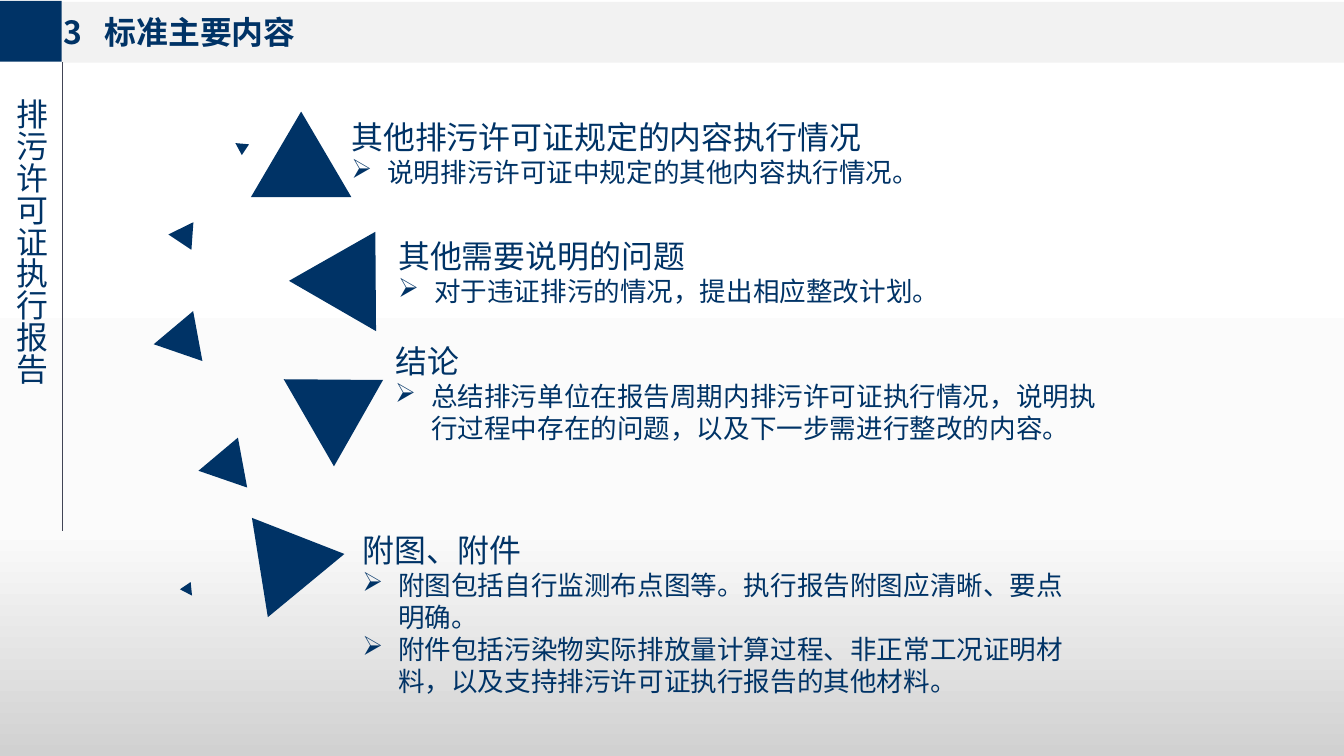
import copy

import lxml.etree
import pptx
import pptx.dml.color
import pptx.enum.shapes
import pptx.enum.text
import pptx.oxml.ns
import pptx.util

PX = 9525
COLORS = {"navy": "003366", "band": "F2F2F2", "rule": "414455"}
BACKDROP = [(0.14, "FFFFFF"), (0.70, "FBFBFB"), (1.0, "D1D1D1")]
BODY_FONT = "Noto Sans CJK SC"
HEADING_FONT = "Roboto Condensed"
INDENT = 36
INSETS = (10, 5, 10, 5)

SECTIONS = [
    ((343, 113, 724, 81), "其他排污许可证规定的内容执行情况",
     ["说明排污许可证中规定的其他内容执行情况。"]),
    ((390, 233, 675, 81), "其他需要说明的问题",
     ["对于违证排污的情况，提出相应整改计划。"]),
    ((387, 338, 749, 113), "结论",
     ["总结排污单位在报告周期内排污许可证执行情况，说明执行过程中存在的问题，"
      "以及下一步需进行整改的内容。"]),
    ((354, 528, 736, 178), "附图、附件",
     ["附图包括自行监测布点图等。执行报告附图应清晰、要点明确。",
      "附件包括污染物实际排放量计算过程、非正常工况证明材料，"
      "以及支持排污许可证执行报告的其他材料。"]),
]

TRIANGLE_SIZES = {"large": (101, 86), "medium": (51, 45), "small": (28, 24), "tiny": (13, 12)}
TRIANGLES = [
    ("large", 252, 112, 0), ("large", 305, 227, 30), ("large", 297, 360, 60),
    ("small", 173, 228, 153.9), ("tiny", 235, 141, 303.5), ("tiny", 183, 587, 145.8),
    ("medium", 151, 319, 259.5), ("medium", 196, 446, 259.5), ("large", 253, 520, 80.9),
]


def scaled(lengths):
    """Turn px lengths into EMU."""
    return [pptx.util.Emu(length * PX) for length in lengths]


def rgb(value):
    """Return a colour object for a hex string."""
    return pptx.dml.color.RGBColor.from_string(value)


def add_xml(parent, tag, **attributes):
    """Append a drawing element to a parent."""
    return lxml.etree.SubElement(parent, pptx.oxml.ns.qn(tag), attributes)


def paint_background(page):
    """Fill the page from top to bottom with the grey gradient."""
    fill = page.background.fill
    fill.gradient()
    fill.gradient_angle = 270
    stop_list = page.element.find(".//" + pptx.oxml.ns.qn("a:gsLst"))
    stop_list.append(copy.deepcopy(stop_list[-1]))
    for stop, (position, value) in zip(fill.gradient_stops, BACKDROP):
        stop.position = position
        stop.color.rgb = rgb(value)


def add_solid(page, kind, box, color, rotation=0):
    """Add a filled preset shape without outline."""
    shape = page.shapes.add_shape(kind, *scaled(box))
    shape.shadow.inherit = False
    shape.fill.solid()
    shape.fill.fore_color.rgb = rgb(COLORS[color])
    shape.line.fill.background()
    shape.rotation = rotation


def add_rule(page, start, end):
    """Add the thin line beside the vertical title."""
    rule = page.shapes.add_connector(
        pptx.enum.shapes.MSO_CONNECTOR.STRAIGHT, *scaled(start + end))
    rule.line.color.rgb = rgb(COLORS["rule"])
    rule.line.width = pptx.util.Pt(0.25)
    add_xml(rule._element.spPr, "a:effectLst")


def add_frame(page, box, insets=(0, 0, 0, 0), wrap=True, vertical=False):
    """Add an empty text box and return its text frame."""
    frame = page.shapes.add_textbox(*scaled(box)).text_frame
    frame.word_wrap = wrap
    frame.auto_size = pptx.enum.text.MSO_AUTO_SIZE.SHAPE_TO_FIT_TEXT
    (frame.margin_left, frame.margin_top,
     frame.margin_right, frame.margin_bottom) = scaled(insets)
    if vertical:
        frame._txBody.bodyPr.set("vert", "eaVert")
    return frame


def write(para, text, size=24, font=BODY_FONT, bold=False, bullet=None, tab=None):
    """Write formatted text into a paragraph."""
    span = para.add_run()
    span.text = text
    span.font.size = pptx.util.Pt(size)
    span.font.name = font
    span.font.bold = bold
    span.font.color.rgb = rgb(COLORS["navy"])
    add_xml(span.font._element, "a:ea", typeface=font)
    properties = para._p.get_or_add_pPr()
    if bullet:
        properties.set("marL", str(INDENT * PX))
        properties.set("indent", str(-INDENT * PX))
        add_xml(properties, "a:buChar", char=bullet)
    if tab:
        tabs = add_xml(properties, "a:tabLst")
        add_xml(tabs, "a:tab", pos=str(tab * PX), algn="l")


def add_section(page, box, heading, points):
    """Add a heading with its bulleted points."""
    frame = add_frame(page, box, insets=INSETS)
    write(frame.paragraphs[0], heading, font=HEADING_FONT)
    for point in points:
        write(frame.add_paragraph(), point, size=20, bullet="➢")


def main():
    """Build the slide and save it."""
    deck = pptx.Presentation()
    deck.slide_width, deck.slide_height = scaled((1350, 759))
    page = deck.slides.add_slide(deck.slide_layouts[6])
    paint_background(page)

    shapes = pptx.enum.shapes.MSO_SHAPE
    add_solid(page, shapes.RECTANGLE, (62, 2, 1288, 61), "band")
    add_solid(page, shapes.RECTANGLE, (0, 1, 62, 61), "navy")
    title = add_frame(page, (64, 13, 235, 39), wrap=False)
    write(title.paragraphs[0], "3\t标准主要内容", bold=True, tab=41)
    side_title = add_frame(page, (13, 99, 38, 515), vertical=True)
    write(side_title.paragraphs[0], "排污许可证执行报告")
    add_rule(page, (62, 533), (62, 62))

    for size, left, top, rotation in TRIANGLES:
        box = (left, top, *TRIANGLE_SIZES[size])
        add_solid(page, shapes.ISOSCELES_TRIANGLE, box, "navy", rotation)
    for box, heading, points in SECTIONS:
        add_section(page, box, heading, points)

    deck.save("out.pptx")


if __name__ == "__main__":
    main()
